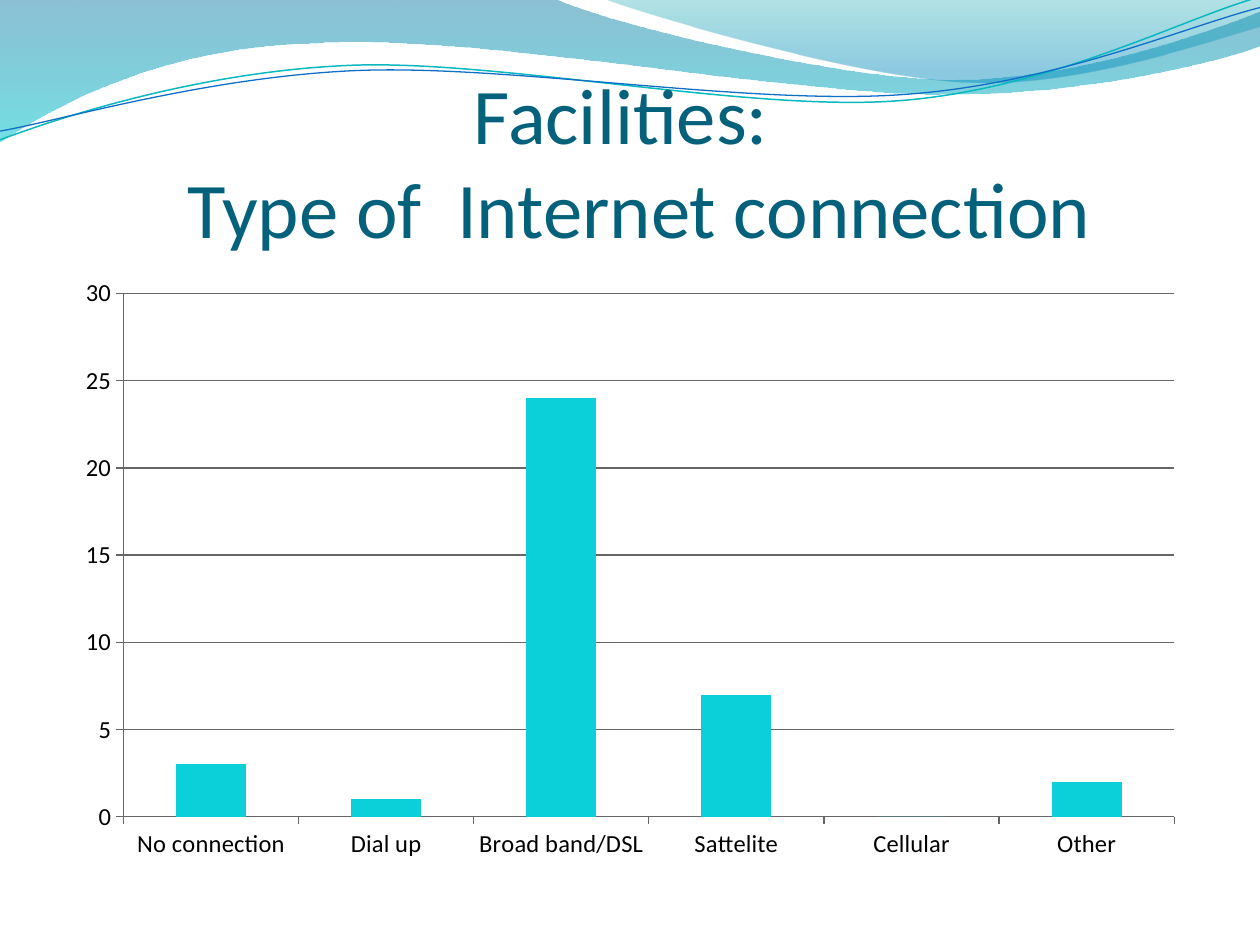
"""Build a slide with a wave banner, a title and a column chart of Internet connections."""
from dataclasses import dataclass
from typing import Any

from lxml.etree import SubElement
from pptx import Presentation
from pptx.chart.data import CategoryChartData
from pptx.dml.color import RGBColor
from pptx.enum.chart import XL_CHART_TYPE, XL_TICK_MARK
from pptx.enum.text import MSO_ANCHOR, PP_ALIGN
from pptx.oxml.ns import qn
from pptx.util import Pt

TITLE_COLOR = RGBColor(0x04, 0x61, 0x7B)
BAR_COLOR = RGBColor(0x0B, 0xD0, 0xD9)
AXIS_COLOR = RGBColor(0x66, 0x66, 0x66)
BLACK = RGBColor(0x00, 0x00, 0x00)
STEEL = RGBColor(0x00, 0x74, 0xA1)
AQUA = RGBColor(0x00, 0xC6, 0xCF)
TEAL = RGBColor(0x00, 0xA1, 0xA9)
AZURE = RGBColor(0x00, 0x8B, 0xBF)
LINE_TEAL = RGBColor(0x0A, 0xB8, 0xBF)
LINE_BLUE = RGBColor(0x0F, 0x6F, 0xC6)
FONT = "Calibri"
UNITS_PER_POINT = 100
CHART_WIDTH, CHART_HEIGHT = 648, 345.6
PLOT_LAYOUT = {"x": 34.6 / CHART_WIDTH, "y": 15.1 / CHART_HEIGHT,
               "w": 600.4 / CHART_WIDTH, "h": 299.1 / CHART_HEIGHT}
CONNECTIONS = {"No connection": 3, "Dial up": 1, "Broad band/DSL": 24,
               "Sattelite": 7, "Cellular": 0, "Other": 2}

Point = tuple[float, float]


@dataclass
class Stop:
    position: float
    color: RGBColor
    opacity: int


@dataclass
class Wave:
    """Segments hold one end point, or two control points and an end point."""
    start: Point
    segments: list[list[Point]]
    stops: tuple[Stop, ...] = ()
    line_color: RGBColor | None = None
    line_width: float = 0


WAVES = [
    Wave((0, 0), [
        [(317, -0.7)],
        [(343, 12.2), (478, 45.4), (546, 45.4)], [(614, 45.4), (690, 18.7), (720, 6.5)],
        [(720.7, 25.9)],
        [(708, 31.7), (626, 54.7), (537, 54)], [(448, 54), (275, 20.2), (185, 24.5)],
        [(93, 25.9), (33, 59.8), (-0.7, 81.4)], [(0, 0)],
    ], stops=(Stop(0, STEEL, 45), Stop(1, AQUA, 55))),
    Wave((345, -0.7), [
        [(366.5, 7.9), (491, 44.6), (553.7, 46.8)], [(616, 49.7), (692, 23), (720, 15.1)],
        [(720, 0)], [(345, -0.7)],
    ], stops=(Stop(0, TEAL, 30), Stop(0.8, AZURE, 45))),
    Wave((0, 79.9), [
        [(34.6, 67), (113.8, 41), (199.4, 37.4)], [(284.4, 33.8), (427, 64.1), (513.4, 57.6)],
        [(599.8, 51.1), (675.4, 10.8), (718.6, -1.4)],
    ], line_color=LINE_TEAL, line_width=0.85),
    Wave((0, 74.9), [
        [(33.8, 69.1), (118, 43.9), (203.8, 40.3)], [(290.2, 36.7), (429.8, 60.5), (516.2, 54)],
        [(602, 48.2), (677.5, 15.1), (720, 4.3)],
    ], line_color=LINE_BLUE, line_width=0.75),
]


def apply(target: Any, values: dict[str, Any]) -> None:
    for name, value in values.items():
        setattr(target, name, value)


def bend_segments(shape: Any, segments: list[list[Point]]) -> None:
    lines = iter(list(shape._element.spPr.iter(qn("a:lnTo"))))
    for segment in segments:
        first, *others = [next(lines) for _ in segment]
        if others:
            first.tag = qn("a:cubicBezTo")
        for other in others:
            first.append(other[0])
            other.getparent().remove(other)


def draw_wave(slide: Any, wave: Wave) -> None:
    points = [(x * UNITS_PER_POINT, y * UNITS_PER_POINT)
              for x, y in [wave.start, *sum(wave.segments, [])]]
    builder = slide.shapes.build_freeform(*points[0], scale=Pt(1) / UNITS_PER_POINT)
    builder.add_line_segments(points[1:], close=bool(wave.stops))
    shape = builder.convert_to_shape()
    bend_segments(shape, wave.segments)
    shape.shadow.inherit = False
    if not wave.stops:
        shape.fill.background()
        shape.line.color.rgb = wave.line_color
        shape.line.width = Pt(wave.line_width)
        return
    shape.line.fill.background()
    shape.fill.gradient()
    shape.fill.gradient_angle = 270
    for gradient_stop, stop in zip(shape.fill.gradient_stops, wave.stops):
        gradient_stop.position = stop.position
        gradient_stop.color.rgb = stop.color
    colors = shape._element.spPr.iter(qn("a:srgbClr"))
    for color, stop in zip(colors, wave.stops):
        SubElement(color, qn("a:alpha"), val=str(stop.opacity * 1000))


def write_title(slide: Any) -> None:
    title = slide.shapes.title
    slide.shapes._spTree.append(title._element)
    apply(title, {"left": Pt(36), "top": Pt(55.5), "width": Pt(648), "height": Pt(90)})
    frame = title.text_frame
    apply(frame, {"margin_left": 0, "margin_right": 0, "margin_top": Pt(3.6),
                  "margin_bottom": 0, "word_wrap": True,
                  "vertical_anchor": MSO_ANCHOR.BOTTOM})
    frame.text = "Facilities: \v Type of  Internet connection"
    paragraph = frame.paragraphs[0]
    paragraph.alignment = PP_ALIGN.CENTER
    for run in paragraph.runs:
        apply(run.font, {"name": FONT, "size": Pt(45)})
        run.font.color.rgb = TITLE_COLOR


def draw_chart(slide: Any) -> None:
    data = CategoryChartData()
    data.categories = list(CONNECTIONS)
    data.add_series("Series 1", list(CONNECTIONS.values()))
    chart = slide.shapes.add_chart(XL_CHART_TYPE.COLUMN_CLUSTERED, Pt(36), Pt(152.6),
                                   Pt(CHART_WIDTH), Pt(CHART_HEIGHT), data).chart
    apply(chart, {"has_legend": False, "has_title": False})
    apply(chart.font, {"name": FONT, "size": Pt(14)})
    chart.font.color.rgb = BLACK
    plot = chart.plots[0]
    apply(plot, {"gap_width": 150, "vary_by_categories": False})
    fill = plot.series[0].format.fill
    fill.solid()
    fill.fore_color.rgb = BAR_COLOR
    value_axis = chart.value_axis
    apply(value_axis, {"minimum_scale": 0, "maximum_scale": 30, "major_unit": 5,
                       "has_major_gridlines": True})
    for axis in (chart.category_axis, value_axis):
        axis.major_tick_mark = XL_TICK_MARK.OUTSIDE
    for element in (chart.category_axis, value_axis, value_axis.major_gridlines):
        element.format.line.color.rgb = AXIS_COLOR
        element.format.line.width = Pt(0.75)
    plot_area = chart._chartSpace.chart.plotArea
    for old_layout in plot_area.findall(qn("c:layout")):
        plot_area.remove(old_layout)
    layout = SubElement(plot_area, qn("c:layout"))
    plot_area.insert(0, layout)
    manual = SubElement(layout, qn("c:manualLayout"))
    settings = {"layoutTarget": "inner", "xMode": "edge", "yMode": "edge", **PLOT_LAYOUT}
    for name, value in settings.items():
        SubElement(manual, qn(f"c:{name}"), val=str(value))


def main() -> None:
    presentation = Presentation()
    apply(presentation, {"slide_width": Pt(720), "slide_height": Pt(540)})
    slide = presentation.slides.add_slide(presentation.slide_layouts[5])
    for wave in WAVES:
        draw_wave(slide, wave)
    write_title(slide)
    draw_chart(slide)
    presentation.save("out.pptx")


if __name__ == "__main__":
    main()
